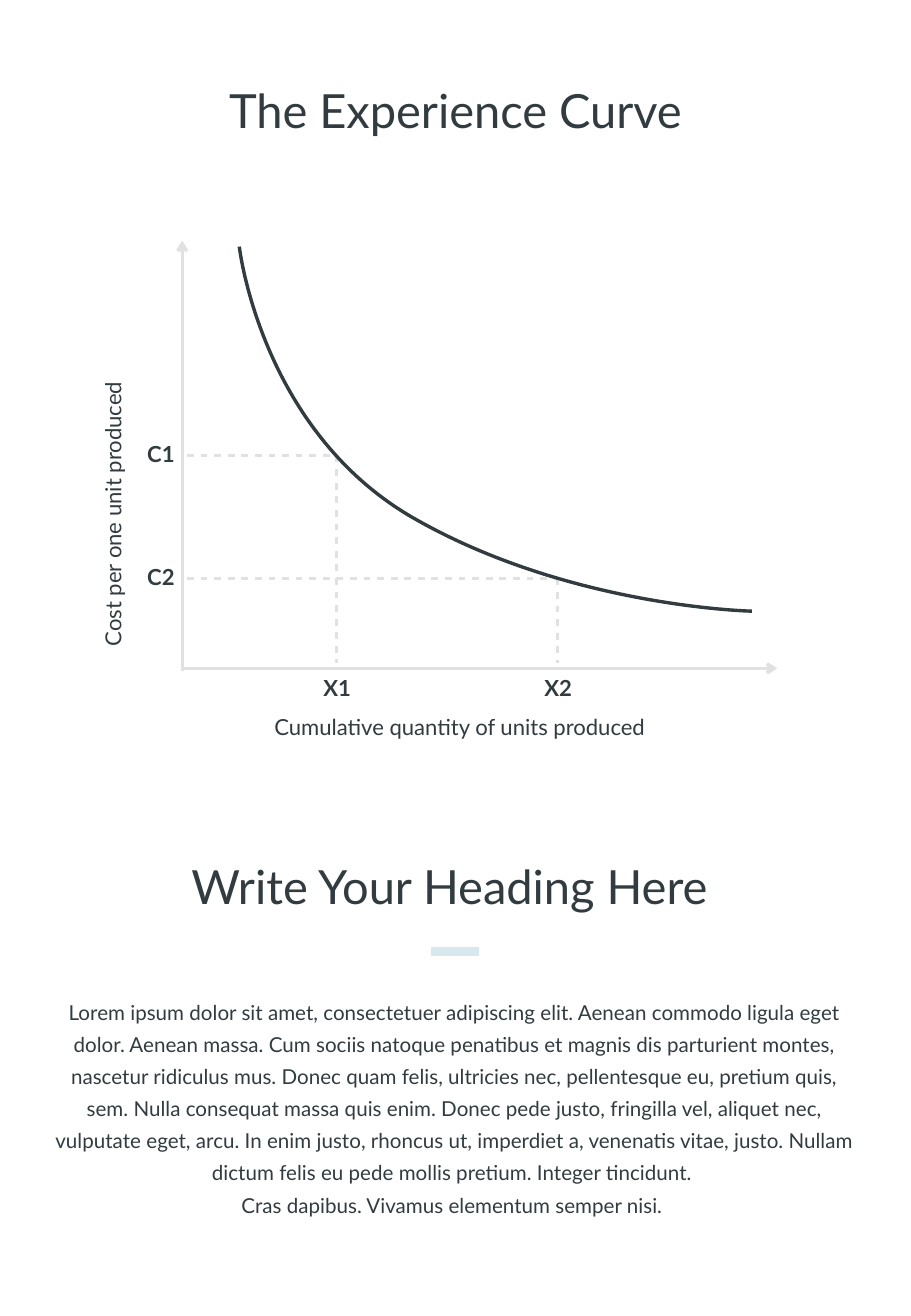
from dataclasses import dataclass

from lxml import etree
from pptx import Presentation
from pptx.dml.color import RGBColor
from pptx.enum.shapes import MSO_CONNECTOR
from pptx.enum.text import MSO_ANCHOR, MSO_AUTO_SIZE, PP_ALIGN
from pptx.oxml.ns import qn
from pptx.util import Emu, Pt

STRAIGHT = MSO_CONNECTOR.STRAIGHT
TOP, MIDDLE = MSO_ANCHOR.TOP, MSO_ANCHOR.MIDDLE
CENTER = PP_ALIGN.CENTER
GROW = MSO_AUTO_SIZE.SHAPE_TO_FIT_TEXT
TITLE_AND_CONTENT = 1
EMU_PER_PX = 9144  # 100 px to the inch

BODY = (
    "Lorem ipsum dolor sit amet, consectetuer adipiscing elit. Aenean commodo ligula eget "
    "dolor. Aenean massa. Cum sociis natoque penatibus et magnis dis parturient montes, "
    "nascetur ridiculus mus. Donec quam felis, ultricies nec, pellentesque eu, pretium quis, "
    "sem. Nulla consequat massa quis enim. Donec pede justo, fringilla vel, aliquet nec, "
    "vulputate eget, arcu. In enim justo, rhoncus ut, imperdiet a, venenatis vitae, justo. "
    "Nullam dictum felis eu pede mollis pretium. Integer tincidunt. \v"
    "Cras dapibus. Vivamus elementum semper nisi. "
)


@dataclass(frozen=True)
class Theme:
    font: str = "Lato"
    ink: RGBColor = RGBColor(0x32, 0x3C, 0x40)
    axis: RGBColor = RGBColor(0xE1, 0xE1, 0xE3)
    accent: RGBColor = RGBColor(0xD8, 0xE8, 0xED)
    heading_size: float = 27.9
    label_size: float = 13.1
    body_size: float = 12.2
    line_width: int = 2
    bar_width: int = 5


def px(length):
    return Emu(length * EMU_PER_PX)


def apply(target, values):
    for name, value in values.items():
        setattr(target, name, value)


class Page:
    def __init__(self, slide, theme):
        self.slide = slide
        self.shapes = slide.shapes
        self.theme = theme

    def format_text(self, shape, text, box, size, spacing, bold=False, anchor=MIDDLE):
        place = dict(zip(("left", "top", "width", "height"), map(px, box)))
        apply(shape, place)
        frame = shape.text_frame
        apply(frame, {
            "margin_left": 0, "margin_right": 0, "margin_top": 0, "margin_bottom": 0,
            "word_wrap": True, "vertical_anchor": anchor, "auto_size": GROW,
        })
        paragraph = frame.paragraphs[0]
        paragraph.text = text
        apply(paragraph, {"alignment": CENTER, "line_spacing": spacing, "space_before": Pt(0)})
        for run in paragraph.runs:
            apply(run.font, {"name": self.theme.font, "size": Pt(size), "bold": bold})
            run.font.color.rgb = self.theme.ink
        return shape

    def text_box(self):
        return self.shapes.add_textbox(0, 0, 0, 0)

    def heading(self, shape, text, box):
        self.format_text(shape, text, box, self.theme.heading_size, 0.8)

    def label(self, text, box, bold=False):
        return self.format_text(self.text_box(), text, box, self.theme.label_size, 0.9, bold)

    def body(self, text, box):
        shape = self.format_text(
            self.slide.placeholders[1], text, box, self.theme.body_size, 1.3, anchor=TOP)
        properties = shape.text_frame.paragraphs[0]._p.get_or_add_pPr()
        properties.set("marL", "0")
        properties.set("indent", "0")
        etree.SubElement(properties, qn("a:buNone"))

    def line(self, start, end, color, width):
        """Draw a straight line and return its a:ln element."""
        line = self.shapes.add_connector(STRAIGHT, *map(px, start + end))
        line.line.color.rgb = color
        line.line.width = Pt(width)
        properties = line._element.spPr
        etree.SubElement(properties, qn("a:effectLst"))
        return properties.find(qn("a:ln"))

    def axis(self, tip, origin):
        outline = self.line(tip, origin, self.theme.axis, self.theme.line_width)
        etree.SubElement(outline, qn("a:headEnd"), type="arrow")

    def guide(self, start, end):
        outline = self.line(start, end, self.theme.axis, self.theme.line_width)
        dashes = etree.SubElement(outline, qn("a:custDash"))
        etree.SubElement(dashes, qn("a:ds"), d="200000", sp="200000")

    def curve(self, start, points):
        """Draw cubic Bézier segments, three points for each."""
        builder = self.shapes.build_freeform(*start, scale=EMU_PER_PX)
        builder.add_line_segments(points, close=False)
        shape = builder.convert_to_shape()
        shape.shadow.inherit = False
        shape.fill.background()
        shape.line.color.rgb = self.theme.ink
        shape.line.width = Pt(self.theme.line_width)
        outline = next(shape._element.iter(qn("a:path")))
        steps = outline.findall(qn("a:lnTo"))
        for first in range(0, len(steps), 3):
            segment = etree.SubElement(outline, qn("a:cubicBezTo"))
            for step in steps[first:first + 3]:
                segment.append(step[0])
                outline.remove(step)


def main():
    deck = Presentation()
    deck.slide_width, deck.slide_height = px(750), px(1083)
    slide = deck.slides.add_slide(deck.slide_layouts[TITLE_AND_CONTENT])
    theme = Theme()
    page = Page(slide, theme)

    page.heading(slide.shapes.title, "The Experience Curve", (48, 76, 654, 38))

    axis_x, axis_y = 150, 550
    page.axis((axis_x, 198), (axis_x, axis_y + 2))
    page.axis((640, axis_y), (axis_x, axis_y))

    label_width, label_height = 31, 20
    for number, (quantity, cost) in enumerate(((277, 375), (459, 476)), start=1):
        page.guide((axis_x + 4, cost), (quantity, cost))
        page.guide((quantity, cost), (quantity, axis_y - 4))
        size = (label_width, label_height)
        page.label(f"C{number}", (117, cost - label_height // 2) + size, bold=True)
        page.label(f"X{number}", (quantity - label_width // 2, 557) + size, bold=True)

    page.curve((197, 203), [
        (197, 203), (214, 352), (338, 425),
        (467, 500), (619, 503), (619, 503),
    ])
    page.label("Cumulative quantity of units produced", (163, 589, 431, label_height))
    cost_title = page.label("Cost per one unit produced", (-52, 413, 292, label_height))
    cost_title.rotation = 270

    page.heading(page.text_box(), "Write Your Heading Here ", (45, 714, 660, 38))
    page.line((355, 783), (394, 783), theme.accent, theme.bar_width)
    page.body(BODY, (45, 817, 659, 184))

    deck.save("out.pptx")


if __name__ == "__main__":
    main()
